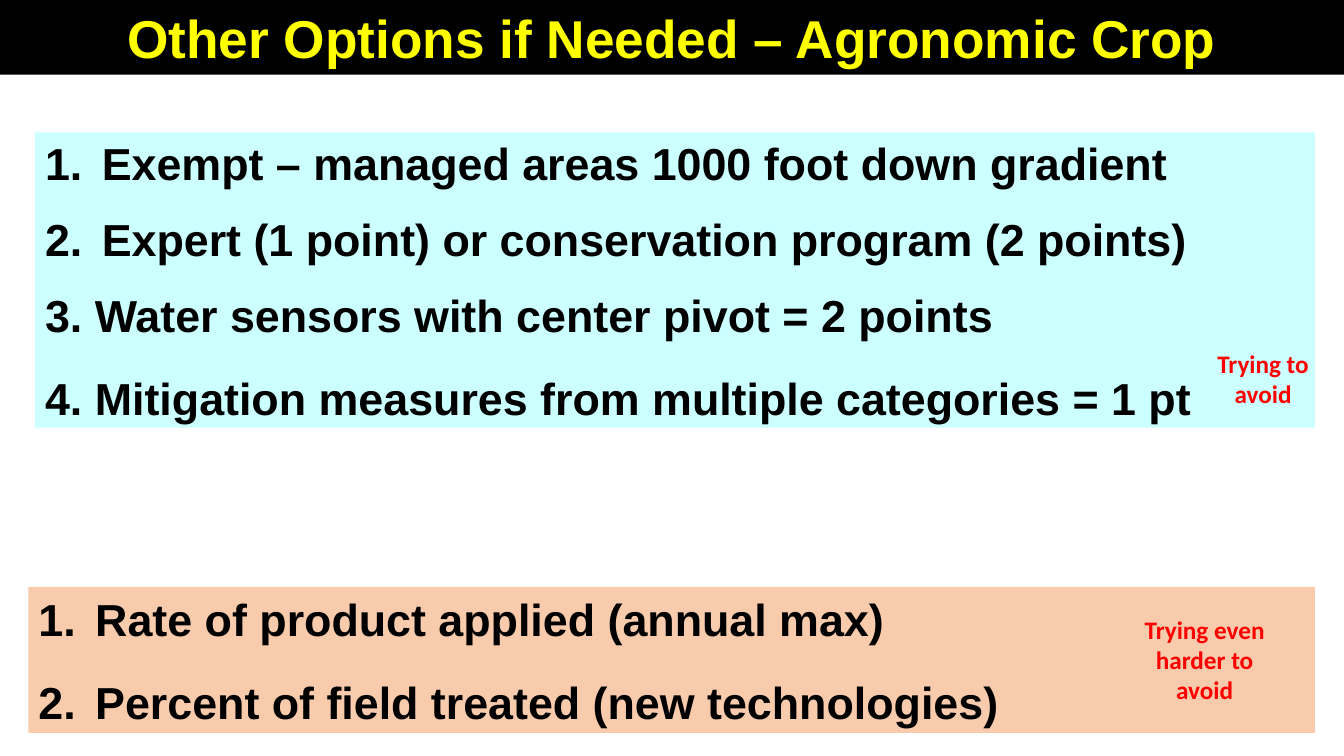
from lxml import etree
from pptx import Presentation
from pptx.dml.color import RGBColor
from pptx.enum.text import MSO_ANCHOR, MSO_AUTO_SIZE, PP_ALIGN
from pptx.oxml.ns import qn
from pptx.util import Pt

MIDDLE, TOP = MSO_ANCHOR.MIDDLE, MSO_ANCHOR.TOP
NO_FIT = MSO_AUTO_SIZE.NONE
CENTER, LEFT = PP_ALIGN.CENTER, PP_ALIGN.LEFT
TWO_CONTENT = 3
NUMBER_INDENT = Pt(40.5)

TITLE_FONT = {"name": "Arial", "size": Pt(38), "bold": True}
LIST_FONT = {"name": "Arial", "size": Pt(32), "bold": True}
NOTE_FONT = {"name": "Calibri", "size": Pt(18), "bold": True}

# Each item: text, automatic number, space before in points
MITIGATION_ITEMS = [
    ("Exempt – managed areas 1000 foot down gradient", True, 0),
    ("Expert (1 point) or conservation program (2 points)", True, 16),
    ("3. Water sensors with center pivot = 2 points", False, 16),
    ("4. Mitigation measures from multiple categories = 1 pt", False, 20.5),
]
APPLICATION_ITEMS = [
    ("Rate of product applied (annual max)", True, 0),
    ("Percent of field treated (new technologies)", True, 21),
]


def color(hex_string):
    return RGBColor.from_string(hex_string)


def place(shape, box):
    for name, value in zip(("left", "top", "width", "height"), box):
        setattr(shape, name, Pt(value))


def fill_with(shape, hex_string):
    shape.fill.solid()
    shape.fill.fore_color.rgb = color(hex_string)


def set_frame(shape, anchor):
    settings = {"word_wrap": True, "auto_size": NO_FIT, "vertical_anchor": anchor}
    for name, value in settings.items():
        setattr(shape.text_frame, name, value)


def write(para, text, font, hex_string, align, before=0):
    layout = {"alignment": align, "line_spacing": 1.0,
              "space_before": Pt(before), "space_after": Pt(0)}
    for name, value in layout.items():
        setattr(para, name, value)
    span = para.add_run()
    span.text = text
    for name, value in font.items():
        setattr(span.font, name, value)
    span.font.color.rgb = color(hex_string)


def set_number(para, numbered):
    properties = para._p.get_or_add_pPr()
    indent = NUMBER_INDENT if numbered else 0
    properties.set("marL", str(indent))
    properties.set("indent", str(-indent))
    if numbered:
        etree.SubElement(properties, qn("a:buFont"), typeface="+mj-lt")
        etree.SubElement(properties, qn("a:buAutoNum"), type="arabicPeriod")
    else:
        etree.SubElement(properties, qn("a:buNone"))


def add_title_bar(page, box, text):
    title = page.shapes.title
    place(title, box)
    fill_with(title, "000000")
    set_frame(title, MIDDLE)
    write(title.text_frame.paragraphs[0], text, TITLE_FONT, "FFFF00", CENTER)


def add_list_panel(page, holder, box, background, items, note, note_box):
    # Numbered list on a coloured panel
    panel = page.placeholders[holder]
    place(panel, box)
    fill_with(panel, background)
    set_frame(panel, MIDDLE)
    frame = panel.text_frame
    for index, (text, numbered, before) in enumerate(items):
        para = frame.add_paragraph() if index else frame.paragraphs[0]
        set_number(para, numbered)
        write(para, text, LIST_FONT, "000000", LEFT, before)

    # Red remark, offset from the panel's corner
    left, top = box[:2]
    dx, dy, width, height = note_box
    remark = page.shapes.add_textbox(
        Pt(left + dx), Pt(top + dy), Pt(width), Pt(height))
    set_frame(remark, TOP)
    write(remark.text_frame.paragraphs[0], note, NOTE_FONT, "FF0000", CENTER)


def main():
    deck = Presentation()
    deck.slide_width, deck.slide_height = Pt(960), Pt(540)
    page = deck.slides.add_slide(deck.slide_layouts[TWO_CONTENT])
    add_title_bar(page, (0, 0, 960, 53.3),
                  "Other Options if Needed – Agronomic Crop")
    add_list_panel(page, 1, (25, 94.5, 914.4, 211), "CCFFFF", MITIGATION_ITEMS,
                   "Trying to avoid", (819.6, 150.5, 115.2, 51))
    add_list_panel(page, 2, (20.3, 419.2, 918.9, 104.4), "F8CBAD",
                   APPLICATION_ITEMS, "Trying even harder to avoid",
                   (782.6, 15.8, 115.2, 72.7))
    deck.save("out.pptx")


if __name__ == "__main__":
    main()
